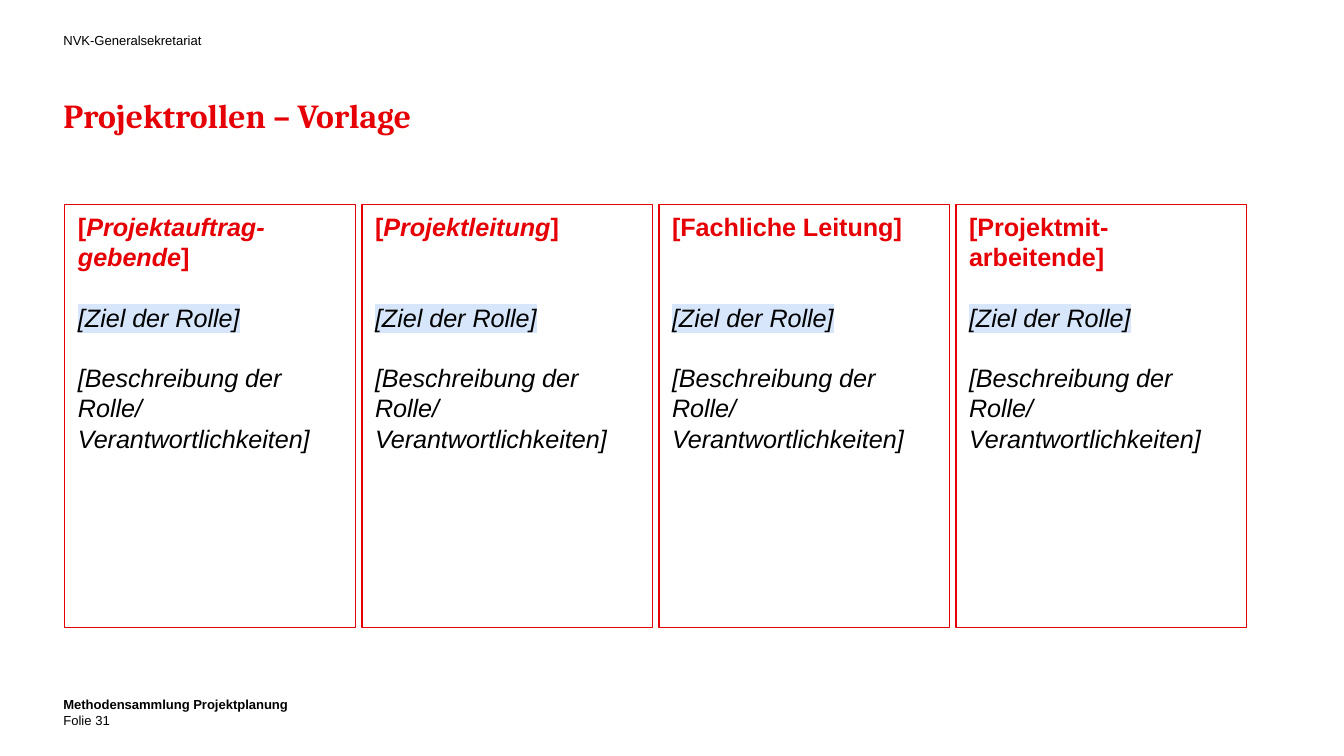
import dataclasses

import pptx
import pptx.dml.color
import pptx.enum.shapes
import pptx.enum.text
import pptx.oxml
import pptx.oxml.ns
import pptx.util


@dataclasses.dataclass(frozen=True)
class Theme:
    red: str = "E60005"
    black: str = "000000"
    mark: str = "D7E6FA"
    sans: str = "Arial"
    serif: str = "Cambria"
    small: float = 7
    body: float = 13.5
    title: float = 18
    small_lead: float = 9
    body_lead: float = 16.2
    title_lead: float = 24
    border: float = 0.75


THEME = Theme()
WIDTH = pptx.util.Inches(10)
HEIGHT = WIDTH * 9 // 16
GRID = 100  # columns and rows on the slide

GOAL = "[Ziel der Rolle]"
# A vertical tab is a line break within the paragraph.
DUTY = "[Beschreibung der Rolle/\vVerantwortlichkeiten]"
# Heading runs as (text, italic), then the lines the heading takes up.
ROLES = [
    ([("[", False), ("Projektauftrag-gebende", True), ("]", False)], 2),
    ([("[", False), ("Projektleitung", True), ("]", False)], 1),
    ([("[Fachliche Leitung]", False)], 1),
    ([("[Projektmit-arbeitende]", False)], 2),
]


def place(col, row, cols, rows):
    """Turn grid units into left, top, width and height."""
    return (int(WIDTH * col / GRID), int(HEIGHT * row / GRID),
            int(WIDTH * cols / GRID), int(HEIGHT * rows / GRID))


def rgb(code):
    return pptx.dml.color.RGBColor.from_string(code)


def mark_run(run, color):
    """Highlight a run that already has its font colour."""
    ns = pptx.oxml.ns.nsdecls("a")
    mark = pptx.oxml.parse_xml(
        f'<a:highlight {ns}><a:srgbClr val="{color}"/></a:highlight>')
    fill = run.font._element.find(pptx.oxml.ns.qn("a:solidFill"))
    fill.addnext(mark)


def write(para, text, size=THEME.small, lead=THEME.small_lead, font=THEME.sans,
          color=THEME.black, bold=False, italic=False, mark=None, before=0):
    """Add text to a paragraph; text is a string or (text, italic) pairs."""
    para.alignment = pptx.enum.text.PP_ALIGN.LEFT
    para.line_spacing = pptx.util.Pt(lead)
    para.space_before = pptx.util.Pt(before)
    pairs = [(text, italic)] if isinstance(text, str) else text
    for words, slant in pairs:
        for n, line in enumerate(words.split("\v")):
            if n:
                para.add_line_break()
            run = para.add_run()
            run.text = line
            run.font.size = pptx.util.Pt(size)
            run.font.name = font
            run.font.bold = bold
            run.font.italic = slant
            run.font.color.rgb = rgb(color)
            if mark:
                mark_run(run, mark)


def add_label(slide, area, text, low=False, **style):
    frame = slide.shapes.add_textbox(*place(*area)).text_frame
    frame.word_wrap = True
    frame.margin_left = frame.margin_right = 0
    frame.margin_top = frame.margin_bottom = 0
    anchor = pptx.enum.text.MSO_ANCHOR
    frame.vertical_anchor = anchor.BOTTOM if low else anchor.TOP
    write(frame.paragraphs[0], text, **style)


def add_card(slide, area, head, lines):
    """Draw a role card; goals line up whatever the heading's length."""
    card = slide.shapes.add_shape(
        pptx.enum.shapes.MSO_SHAPE.RECTANGLE, *place(*area))
    card.shadow.inherit = False
    card.fill.background()
    card.line.color.rgb = rgb(THEME.red)
    card.line.width = pptx.util.Pt(THEME.border)
    frame = card.text_frame
    frame.word_wrap = True
    frame.vertical_anchor = pptx.enum.text.MSO_ANCHOR.TOP
    lead = THEME.body_lead
    base = {"size": THEME.body, "lead": lead}
    write(frame.paragraphs[0], head, color=THEME.red, bold=True, **base)
    write(frame.add_paragraph(), GOAL, italic=True, mark=THEME.mark,
          before=lead * (3 - lines), **base)
    write(frame.add_paragraph(), DUTY, italic=True, before=lead, **base)


def main():
    deck = pptx.Presentation()
    deck.slide_width, deck.slide_height = WIDTH, HEIGHT
    slide = deck.slides.add_slide(deck.slide_layouts[6])

    add_label(slide, (4.72, 4.2, 17.9, 2.1), "NVK-Generalsekretariat")
    add_label(slide, (4.72, 11.9, 80.6, 5.2), "Projektrollen – Vorlage",
              size=THEME.title, lead=THEME.title_lead, font=THEME.serif,
              color=THEME.red, bold=True)
    for n, (head, lines) in enumerate(ROLES):
        add_card(slide, (4.82 + 22.1 * n, 27.05, 21.65, 56), head, lines)
    add_label(slide, (4.72, 92, 90.6, 1.6),
              "Methodensammlung Projektplanung", bold=True)
    add_label(slide, (4.72, 94, 3, 2.3), "Folie", low=True)
    add_label(slide, (7.1, 94.2, 22.5, 2.1), "31", low=True)

    deck.save("out.pptx")


if __name__ == "__main__":
    main()
